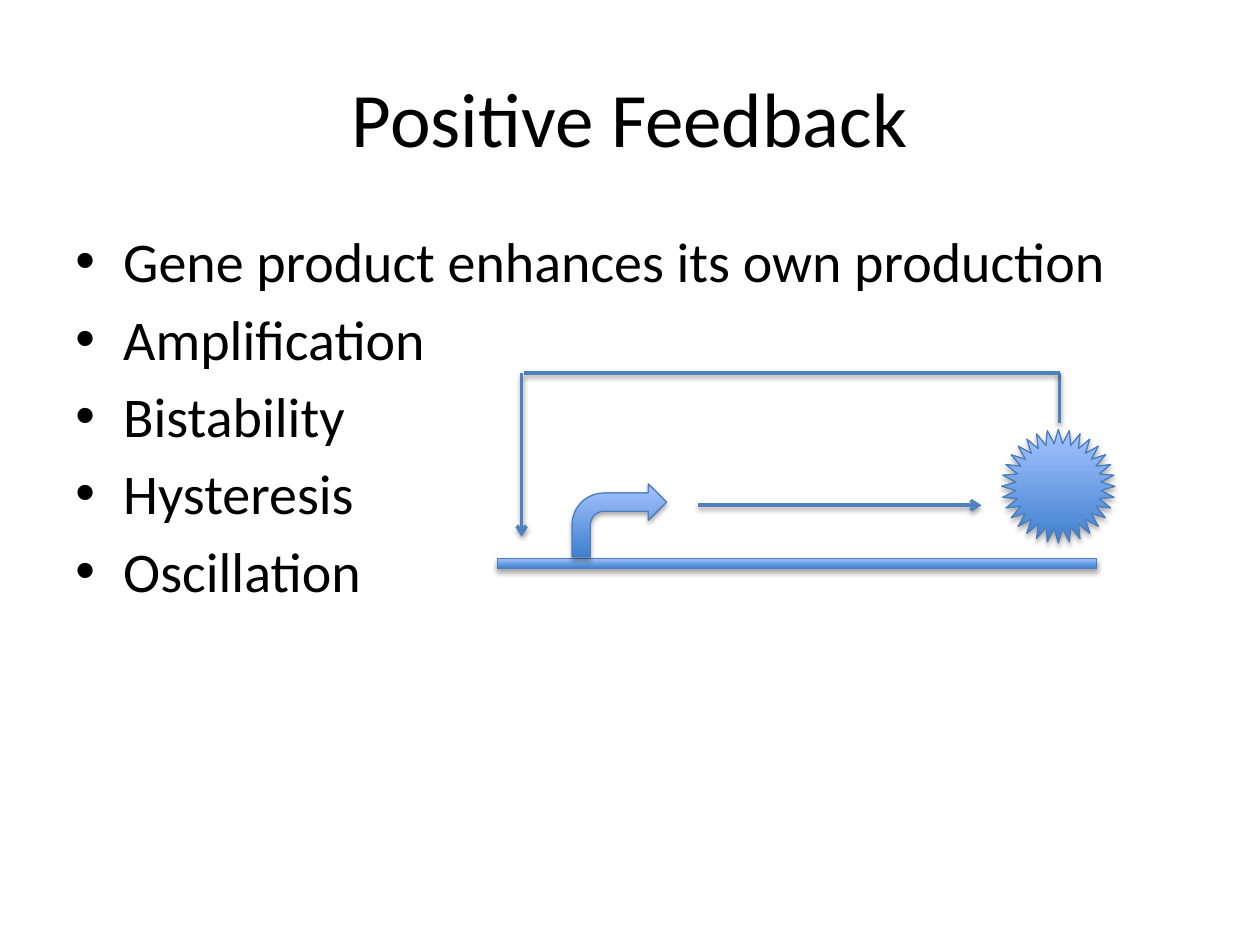
from dataclasses import dataclass

from lxml.etree import SubElement
from pptx import Presentation
from pptx.dml.color import RGBColor
from pptx.enum.shapes import MSO_CONNECTOR, MSO_SHAPE
from pptx.enum.text import MSO_ANCHOR, PP_ALIGN
from pptx.oxml.ns import qn
from pptx.util import Inches, Pt


@dataclass(frozen=True)
class Theme:
    font: str = "Calibri"
    text: str = "000000"
    gradient: tuple = ("3F80CE", "A4C4FF")
    outline: str = "4B7EBC"
    arrow: str = "4F81BD"
    title_size: float = 44
    body_size: float = 32
    bullet_gap: float = 5.8
    outline_width: float = 0.75
    arrow_width: float = 2


def set_values(target, values):
    for name, value in values.items():
        setattr(target, name, value)


class SlideBuilder:
    def __init__(self, slide, theme):
        self.slide = slide
        self.theme = theme
        self.group = None

    def start_group(self):
        self.group = self.slide.shapes.add_group_shape()

    def text(self, lines, box, size, anchor=MSO_ANCHOR.TOP,
             align=PP_ALIGN.LEFT, bulleted=False):
        shape = self.slide.shapes.add_textbox(*map(Inches, box))
        frame = shape.text_frame
        set_values(frame, {"word_wrap": True, "vertical_anchor": anchor})
        frame.text = "\n".join(lines)
        for paragraph in frame.paragraphs:
            paragraph.alignment = align
            set_values(paragraph.font, {"name": self.theme.font, "size": Pt(size)})
            paragraph.font.color.rgb = RGBColor.from_string(self.theme.text)
            if bulleted:
                self.bullet(paragraph)

    def bullet(self, paragraph):
        paragraph.space_before = Pt(self.theme.bullet_gap)
        properties = paragraph._p.get_or_add_pPr()
        indent = Inches(0.38)
        properties.set("marL", str(indent))
        properties.set("indent", str(-indent))
        marker = properties.makeelement(qn("a:buChar"), {"char": "•"})
        properties.find(qn("a:spcBef")).addnext(marker)
        marker.addprevious(properties.makeelement(qn("a:buFont"), {"typeface": "Arial"}))

    def shadow(self, element, opacity, distance):
        effects = SubElement(element.spPr, qn("a:effectLst"))
        outer = SubElement(effects, qn("a:outerShdw"), {
            "blurRad": str(Pt(3.1)), "dist": str(Pt(distance)),
            "dir": "5400000", "rotWithShape": "0"})
        color = SubElement(outer, qn("a:srgbClr"), {"val": "000000"})
        SubElement(color, qn("a:alpha"), {"val": str(opacity * 1000)})

    def line_style(self, line, color, width):
        line.color.rgb = RGBColor.from_string(color)
        line.width = Pt(width)

    def shape(self, kind, box):
        shape = self.group.shapes.add_shape(kind, *map(Inches, box))
        shape.fill.gradient()
        shape.fill.gradient_angle = 90
        for stop, position, color in zip(shape.fill.gradient_stops, (0, 1),
                                         self.theme.gradient):
            stop.position = position
            stop.color.rgb = RGBColor.from_string(color)
        self.line_style(shape.line, self.theme.outline, self.theme.outline_width)
        self.shadow(shape._element, 35, 1.8)

    def line(self, start, end, arrow=False):
        connector = self.group.shapes.add_connector(
            MSO_CONNECTOR.STRAIGHT, *map(Inches, start + end))
        self.line_style(connector.line, self.theme.arrow, self.theme.arrow_width)
        if arrow:
            SubElement(connector.line._get_or_add_ln(), qn("a:tailEnd"), {"type": "arrow"})
        self.shadow(connector._element, 38, 1.6)


def main():
    presentation = Presentation()
    set_values(presentation, {"slide_width": Inches(10), "slide_height": Inches(7.5)})
    theme = Theme()
    builder = SlideBuilder(
        presentation.slides.add_slide(presentation.slide_layouts[6]), theme)

    # Title and bullets
    builder.text(["Positive Feedback"], (0.5, 0.3, 9, 1.25), theme.title_size,
                 anchor=MSO_ANCHOR.MIDDLE, align=PP_ALIGN.CENTER)
    builder.text(["Gene product enhances its own production", "Amplification",
                  "Bistability", "Hysteresis", "Oscillation"],
                 (0.5, 1.75, 9, 4.95), theme.body_size, bulleted=True)

    # Gene, promoter and expression arrow leading to the protein
    builder.start_group()
    builder.shape(MSO_SHAPE.RECTANGLE, (3.95, 4.43, 4.75, 0.08))
    builder.shape(MSO_SHAPE.BENT_ARROW, (4.54, 3.84, 0.75, 0.58))
    builder.line((5.54, 4.01), (7.79, 4.01), arrow=True)
    builder.shape(MSO_SHAPE.STAR_32_POINT, (7.95, 3.41, 0.9, 0.9))

    # Feedback loop from the protein back to the gene
    protein_x, gene_x, loop_y = 8.41, 4.14, 2.96
    builder.line((protein_x, 3.36), (protein_x, loop_y))
    builder.line((protein_x, loop_y), (gene_x + 0.02, loop_y))
    builder.line((gene_x, loop_y), (gene_x, 4.26), arrow=True)

    presentation.save("out.pptx")


if __name__ == "__main__":
    main()
